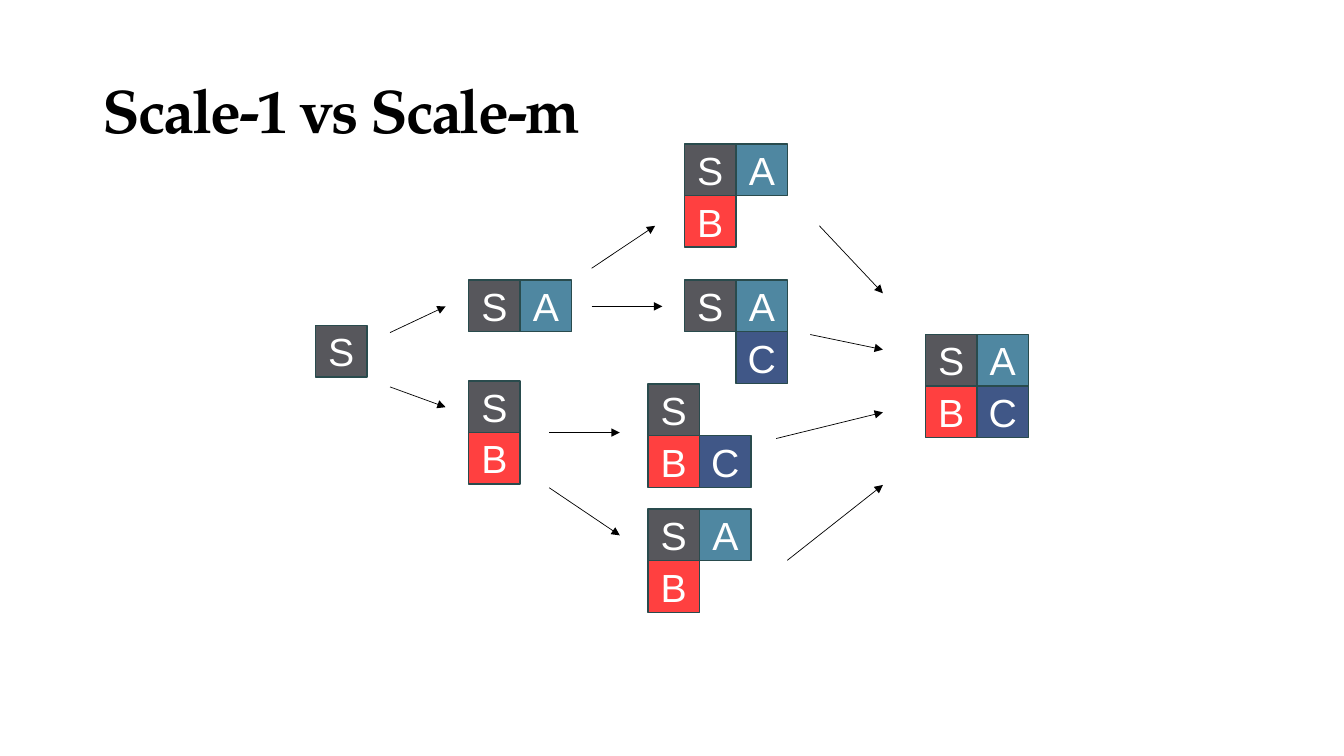
"""Build the slide that compares growing a block one cell at a time."""
from lxml.etree import SubElement
from pptx import Presentation
from pptx.dml.color import RGBColor
from pptx.enum.shapes import MSO_CONNECTOR, MSO_SHAPE
from pptx.enum.text import MSO_ANCHOR, PP_ALIGN
from pptx.oxml.ns import qn
from pptx.util import Cm, Pt

TITLE = "Scale-1 vs Scale-m"
TITLE_BOX = (2.34, 1.02, 29.21, 3.68)
CELL = 1.3
GRID = {"S": (0, 0), "A": (1, 0), "B": (0, 1), "C": (1, 1)}
BLOCKS = [
    ("S", 7.95, 8.2),
    ("SA", 11.81, 7.06),
    ("SB", 11.81, 9.6),
    ("SAB", 17.25, 3.63),
    ("SAC", 17.25, 7.06),
    ("SBC", 16.33, 9.68),
    ("SAB", 16.33, 12.83),
    ("SABC", 23.32, 8.43),
]
ARROWS = [
    (9.83, 8.38, 11.23, 7.72),
    (9.83, 9.75, 11.23, 10.26),
    (14.91, 6.76, 16.51, 5.69),
    (14.91, 7.72, 16.69, 7.72),
    (13.84, 10.9, 15.62, 10.9),
    (13.84, 12.29, 15.62, 13.49),
    (20.65, 5.69, 22.25, 7.39),
    (20.42, 8.43, 22.25, 8.81),
    (19.56, 11.05, 22.25, 10.39),
    (19.84, 14.12, 22.25, 12.22),
]
THEME = {
    "fill": {"S": "1F1F26", "A": "156082", "B": "FF0000", "C": "002060"},
    "alpha": 75,
    "border": "294B4D",
    "ink": "000000",
    "letter": "FFFFFF",
    "title_font": "TeX Gyre Pagella",
    "cell_font": "Arial",
    "title_size": 44,
    "cell_size": 28,
    "border_width": 1,
    "arrow_width": 0.5,
}


def rgb(code):
    return RGBColor.from_string(code)


def style_run(p, font, size, color):
    r = p.runs[0]
    r.font.name = font
    r.font.size = Pt(size)
    r.font.color.rgb = rgb(color)
    return r


def add_title(s):
    tf = s.shapes.add_textbox(*map(Cm, TITLE_BOX)).text_frame
    tf.word_wrap = True
    tf.vertical_anchor = MSO_ANCHOR.MIDDLE
    p = tf.paragraphs[0]
    p.text = TITLE
    p.line_spacing = 0.9
    r = style_run(p, THEME["title_font"], THEME["title_size"], THEME["ink"])
    r.font.bold = True
    r.font._element.set("spc", "-150")


def add_cell(s, letter, x, y):
    sp = s.shapes.add_shape(MSO_SHAPE.RECTANGLE, Cm(x), Cm(y), Cm(CELL), Cm(CELL))
    sp.shadow.inherit = False
    sp.fill.solid()
    sp.fill.fore_color.rgb = rgb(THEME["fill"][letter])
    color = sp._element.spPr.find(qn("a:solidFill"))[0]
    SubElement(color, qn("a:alpha"), val=str(THEME["alpha"] * 1000))
    sp.line.color.rgb = rgb(THEME["border"])
    sp.line.width = Pt(THEME["border_width"])
    tf = sp.text_frame
    tf.vertical_anchor = MSO_ANCHOR.MIDDLE
    p = tf.paragraphs[0]
    p.text = letter
    p.alignment = PP_ALIGN.CENTER
    style_run(p, THEME["cell_font"], THEME["cell_size"], THEME["letter"])


def add_block(s, letters, x, y):
    for letter in letters:
        col, row = GRID[letter]
        add_cell(s, letter, x + col * CELL, y + row * CELL)


def add_arrow(s, ends):
    cxn = s.shapes.add_connector(MSO_CONNECTOR.STRAIGHT, *map(Cm, ends))
    cxn.line.color.rgb = rgb(THEME["ink"])
    cxn.line.width = Pt(THEME["arrow_width"])
    SubElement(cxn.line._get_or_add_ln(), qn("a:tailEnd"), type="triangle")
    SubElement(cxn._element.spPr, qn("a:effectLst"))


def main():
    prs = Presentation()
    prs.slide_width, prs.slide_height = Cm(33.87), Cm(19.05)
    s = prs.slides.add_slide(prs.slide_layouts[6])
    add_title(s)
    for block in BLOCKS:
        add_block(s, *block)
    for ends in ARROWS:
        add_arrow(s, ends)
    prs.save("out.pptx")


if __name__ == "__main__":
    main()
